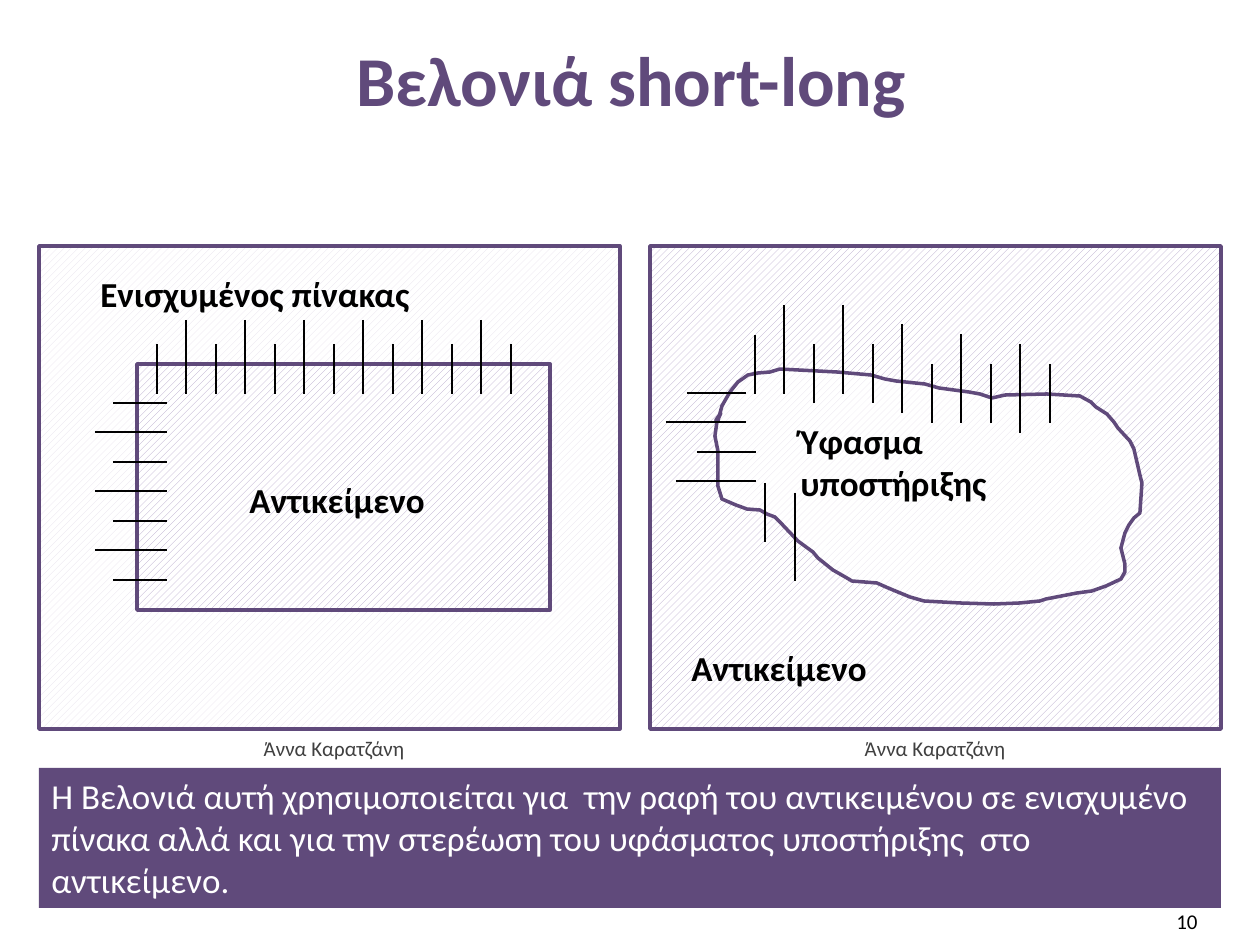
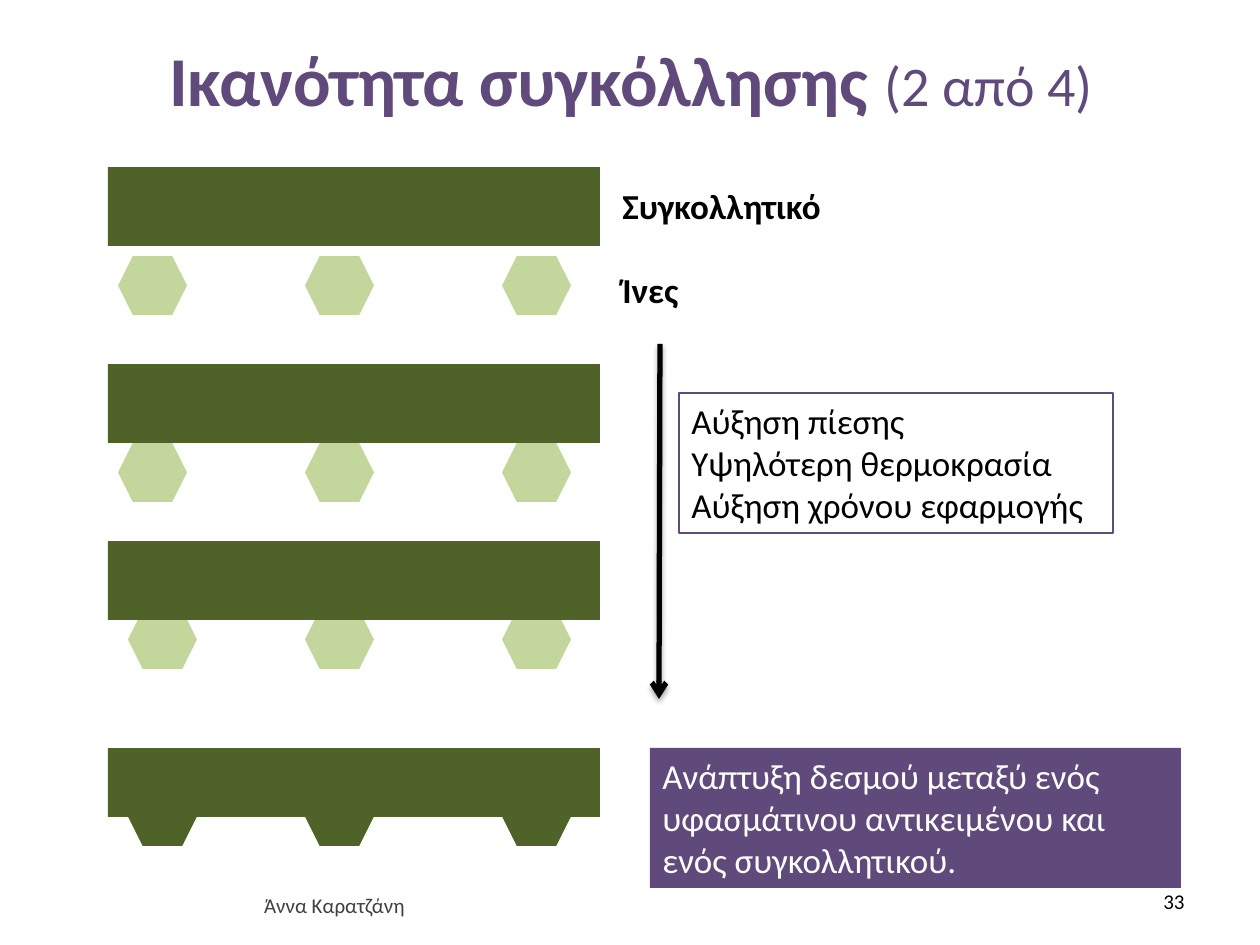
from lxml import etree
from pptx import Presentation
from pptx.dml.color import RGBColor
from pptx.enum.dml import MSO_PATTERN
from pptx.enum.shapes import MSO_CONNECTOR, MSO_SHAPE
from pptx.enum.text import MSO_ANCHOR, PP_ALIGN
from pptx.oxml.ns import qn
from pptx.util import Emu, Pt

PX = 914400 / 126
FONT = "Calibri"
PURPLE, LILAC, PALE = "604A7B", "B3A2C7", "E6E0EC"
OLIVE, LIME = "4F6228", "C3D69B"
BLACK, WHITE, GREY = "000000", "FFFFFF", "404040"

RECT, HEXAGON = MSO_SHAPE.RECTANGLE, MSO_SHAPE.HEXAGON
STRAIGHT = MSO_CONNECTOR.STRAIGHT
HATCH = MSO_PATTERN.WIDE_UPWARD_DIAGONAL
LEFT, CENTER, RIGHT = PP_ALIGN.LEFT, PP_ALIGN.CENTER, PP_ALIGN.RIGHT
TOP, MIDDLE = MSO_ANCHOR.TOP, MSO_ANCHOR.MIDDLE

# Outline of the support fabric, relative to its panel
FABRIC = [
    (68, 175), (72, 160), (76, 153), (80, 146), (88, 136), (98, 129),
    (108, 127), (120, 126), (130, 123), (187, 126), (221, 129), (235, 133),
    (246, 135), (275, 138), (289, 142), (319, 146), (330, 148), (342, 152),
    (355, 149), (397, 148), (430, 150), (441, 156), (446, 161), (457, 168),
    (464, 176), (468, 182), (480, 195), (484, 203), (490, 229), (492, 237),
    (490, 267), (484, 272), (479, 279), (475, 287), (471, 302), (475, 318),
    (475, 326), (471, 333), (456, 340), (442, 345), (427, 347), (396, 353),
    (390, 355), (370, 357), (344, 358), (310, 357), (274, 355), (260, 351),
    (243, 344), (236, 341), (227, 337), (202, 335), (197, 332), (183, 324),
    (168, 312), (163, 306), (148, 295), (130, 276), (125, 271), (117, 268),
    (110, 264), (97, 263), (86, 259), (72, 253), (68, 240), (68, 205),
    (65, 190), (67, 176), (71, 167), (66, 174),
]


def px(n):
    return Emu(round(n * PX))


def area(*box):
    return [px(n) for n in box]


def hue(code):
    return RGBColor.from_string(code)


def hatch(shape, code):
    fill = shape.fill
    fill.patterned()
    fill.pattern = HATCH
    fill.fore_color.rgb = hue(code)
    fill.back_color.rgb = hue(WHITE)


def edge(shape, code, width):
    shape.line.color.rgb = hue(code)
    shape.line.width = Pt(width)


def block(slide, box, color=None, kind=RECT):
    """Add a preset shape without line or shadow."""
    shape = slide.shapes.add_shape(kind, *area(*box))
    shape.shadow.inherit = False
    shape.line.fill.background()
    if color:
        shape.fill.solid()
        shape.fill.fore_color.rgb = hue(color)
    else:
        shape.fill.background()
    return shape


def cloth(slide, box, color):
    """Add a hatched rectangle with a purple edge."""
    shape = block(slide, box)
    hatch(shape, color)
    edge(shape, PURPLE, 2)


def write(shape, text, size=20, color=BLACK, bold=False, align=LEFT, anchor=TOP):
    frame = shape.text_frame
    frame.word_wrap = True
    frame.vertical_anchor = anchor
    frame.text = text
    for para in frame.paragraphs:
        para.alignment = align
        for run in para.runs:
            style(run, size, color, bold)
    return frame


def style(run, size, color, bold):
    font = run.font
    font.name, font.size, font.bold = FONT, Pt(size), bold
    font.color.rgb = hue(color)


def label(slide, box, text, **look):
    return write(slide.shapes.add_textbox(*area(*box)), text, **look)


def seam(slide, x1, y1, x2, y2, width=0.75):
    """Draw a black line and return it with its empty effect list."""
    line = slide.shapes.add_connector(STRAIGHT, *area(x1, y1, x2, y2))
    edge(line, BLACK, width)
    return line, etree.SubElement(line._element.spPr, qn("a:effectLst"))


def arrow(slide, x1, y1, x2, y2):
    line, effects = seam(slide, x1, y1, x2, y2, 3)
    ln = line._element.spPr.find(qn("a:ln"))
    etree.SubElement(ln, qn("a:tailEnd"), type="arrow")
    shadow = etree.SubElement(effects, qn("a:outerShdw"), blurRad="40000",
                              dist="23000", dir="5400000", rotWithShape="0")
    tint = etree.SubElement(shadow, qn("a:srgbClr"), val=BLACK)
    etree.SubElement(tint, qn("a:alpha"), val="35000")


def step(i):
    """Offset of stitch i: two stitches take 59 px."""
    return i * 59 // 2


def page(deck, title, note=""):
    slide = deck.slides.add_slide(deck.slide_layouts[5])
    head = slide.shapes.title
    head.left, head.top, head.width, head.height = area(64, 16, 1134, 125)
    frame = write(head, title, 40, PURPLE, True, CENTER, MIDDLE)
    if note:
        run = frame.paragraphs[0].add_run()
        run.text = note
        style(run, 32, PURPLE, False)
    return slide


def number(slide, x, y, text):
    label(slide, (x, y, 294, 50), text, size=12, align=RIGHT, anchor=MIDDLE)


def credit(slide, x, y, w):
    label(slide, (x, y, w, 38), "Άννα Καρατζάνη", size=12, color=GREY, align=CENTER)


def banner(slide, box, text):
    write(block(slide, box, PURPLE), text, color=WHITE)


def board(slide, x, y, w, h):
    """Object stitched to a padded board."""
    cloth(slide, (x, y, w, h), PALE)
    left, top = x + 98, y + 118
    cloth(slide, (left, top, 413, 246), LILAC)
    for i in range(13):
        at = left + 20 + step(i)
        seam(slide, at, top - (44 if i % 2 else 20), at, top + 30)
    for i in range(7):
        at = top + 39 + step(i)
        seam(slide, left - (42 if i % 2 else 24), at, left + 30, at)
    label(slide, (x + 49, y + 20, 384, 55), "Ενισχυμένος πίνακας", bold=True)
    label(slide, (x + 198, y + 226, 246, 55), "Αντικείμενο", bold=True)


def patch(slide, x, y, w, h):
    """Support fabric stitched to the object."""
    cloth(slide, (x, y, w, h), LILAC)
    pen = slide.shapes.build_freeform(*FABRIC[0], scale=PX)
    pen.add_line_segments(FABRIC[1:], close=True)
    shape = pen.convert_to_shape(px(x), px(y))
    shape.shadow.inherit = False
    hatch(shape, PALE)
    edge(shape, PURPLE, 2)

    ends = [148, 148, 157, 148, 157, 167, 177, 177, 177, 187, 177]
    for i, end in enumerate(ends):
        at = x + 105 + step(i)
        seam(slide, at, y + end - (89 if i % 2 else 59), at, y + end)
    for i, end in enumerate([96, 96, 106, 106]):
        at = y + 147 + step(i)
        seam(slide, x + end - (80 if i % 2 else 59), at, x + end, at)
    for at, top, size in [(115, 237, 59), (145, 247, 88)]:
        seam(slide, x + at, y + top, x + at, y + top + size)
    label(slide, (x + 138, y + 167, 256, 97), "Ύφασμα υποστήριξης", bold=True)
    label(slide, (x + 29, y + 394, 246, 55), "Αντικείμενο", bold=True)


def layer(slide, x, y, w, h, first, drop, color):
    """Adhesive bar over three fibres, which start drop below its top."""
    for at in (first, 197, 394):
        block(slide, (x + at, y + drop, 69, 59), color, HEXAGON)
    block(slide, (x, y, w, h), OLIVE)


def stitch(deck):
    slide = page(deck, "Βελονιά short-long")
    board(slide, 39, 246, 581, 483)
    patch(slide, 650, 246, 571, 483)
    for x in (137, 738):
        credit(slide, x, 729, 394)
    banner(slide, (39, 768, 1182, 140),
           "Η Βελονιά αυτή χρησιμοποιείται για  την ραφή του αντικειμένου σε "
           "ενισχυμένο πίνακα αλλά και για την στερέωση του υφάσματος "
           "υποστήριξης  στο αντικείμενο.")
    number(slide, 916, 896, "10")


def bond(deck):
    slide = page(deck, "Ικανότητα συγκόλλησης ", "(2 από 4)")
    for y, h, first, drop, color in [
        (167, 79, 10, 89, LIME),
        (364, 79, 10, 79, LIME),
        (541, 79, 20, 69, LIME),
        (748, 69, 20, 39, OLIVE),
    ]:
        layer(slide, 108, y, 492, h, first, drop, color)
    names = label(slide, (610, 178, 276, 183), "Συγκολλητικό\nΊνες", bold=True)
    names.paragraphs[1].space_before = Pt(24)
    arrow(slide, 660, 344, 659, 699)
    causes = block(slide, (679, 393, 434, 140))
    edge(causes, PURPLE, 0.75)
    write(causes, "Αύξηση πίεσης\nΥψηλότερη θερμοκρασία\nΑύξηση χρόνου εφαρμογής")
    banner(slide, (650, 748, 531, 140),
           "Ανάπτυξη δεσμού μεταξύ ενός υφασμάτινου αντικειμένου και "
           "ενός συγκολλητικού.")
    credit(slide, 128, 886, 413)
    number(slide, 903, 876, "33")


def main():
    deck = Presentation()
    deck.slide_width, deck.slide_height = area(1260, 945)
    stitch(deck)
    bond(deck)
    deck.save("out.pptx")


if __name__ == "__main__":
    main()
